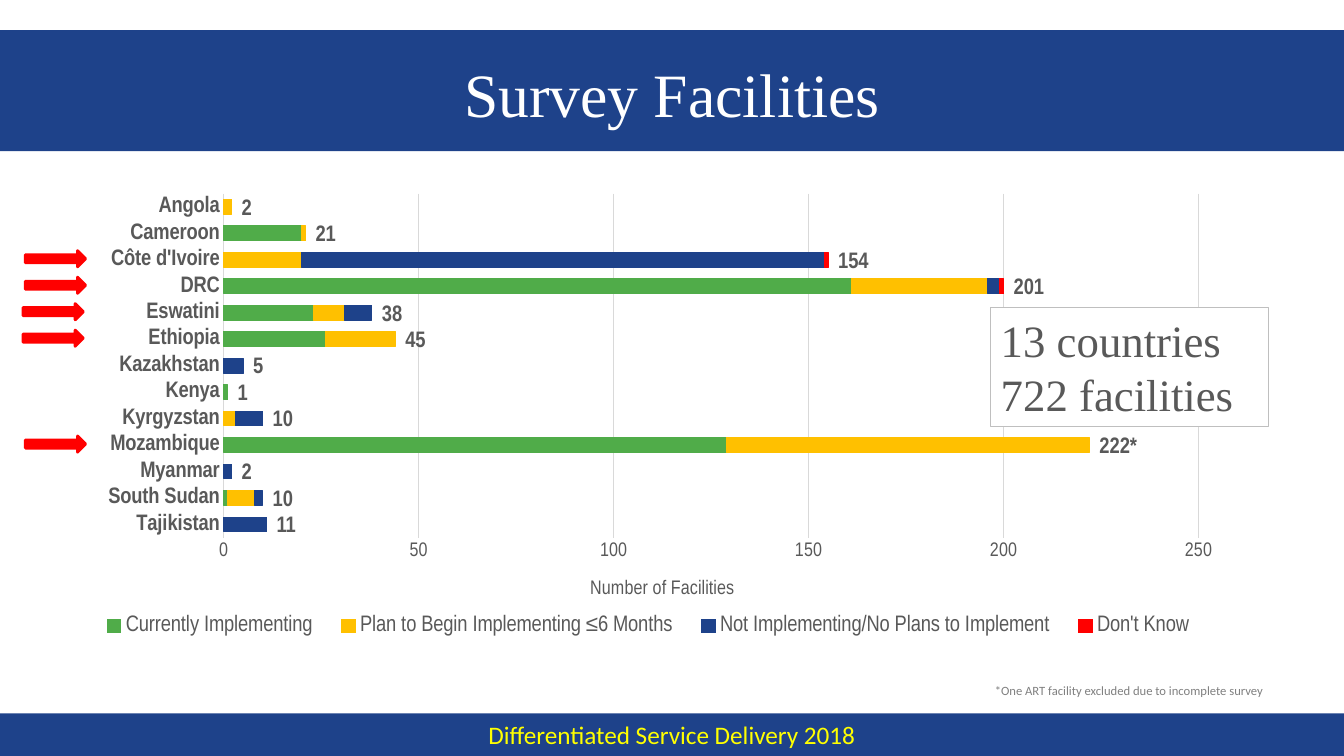
from dataclasses import dataclass
from typing import Any, Optional

from lxml import etree
from pptx import Presentation
from pptx import slide as sl
from pptx import util as u
from pptx.chart import data as cd
from pptx.dml.color import RGBColor
from pptx.enum import chart as ch
from pptx.enum import shapes, text
from pptx.oxml import ns


@dataclass(frozen=True)
class Theme:
    blue: str = "1E428A"
    green: str = "50AC49"
    amber: str = "FFC000"
    red: str = "FF0000"
    yellow: str = "FFFF00"
    white: str = "FFFFFF"
    ink: str = "595959"
    grey: str = "808080"
    border: str = "BFBFBF"
    grid: str = "D9D9D9"
    serif: str = "Times New Roman"
    narrow: str = "Arial Narrow"
    sans: str = "Calibri"
    title_size: int = 44
    callout_size: int = 32
    footer_size: int = 18
    label_size: int = 16
    axis_size: int = 14
    note_size: int = 9
    hairline: float = 0.75


@dataclass(frozen=True)
class Box:
    """A rectangle in centimetres."""
    left: float
    top: float
    width: float
    height: float

    def lengths(self) -> list[u.Length]:
        return [u.Cm(value) for value in (self.left, self.top, self.width, self.height)]


@dataclass(frozen=True)
class Country:
    name: str
    counts: tuple[Optional[int], ...]
    label: str
    arrow_left: Optional[float] = None


@dataclass(frozen=True)
class Status:
    name: str
    color: str


THEME = Theme()
STATUSES = [
    Status("Currently Implementing", THEME.green),
    Status("Plan to Begin Implementing ≤6 Months", THEME.amber),
    Status("Not Implementing/No Plans to Implement", THEME.blue),
    Status("Don't Know", THEME.red),
]
COUNTRIES = [
    Country("Angola", (None, 2, None, None), "2"),
    Country("Cameroon", (20, 1, None, None), "21"),
    Country("Côte d'Ivoire", (None, 20, 134, 1), "154", 0.64),
    Country("DRC", (161, 35, 3, 1), "201", 0.64),
    Country("Eswatini", (23, 8, 7, None), "38", 0.58),
    Country("Ethiopia", (26, 18, None, None), "45", 0.58),
    Country("Kazakhstan", (None, None, 5, None), "5"),
    Country("Kenya", (1, None, None, None), "1"),
    Country("Kyrgyzstan", (None, 3, 7, None), "10"),
    Country("Mozambique", (129, 93, None, None), "222*", 0.64),
    Country("Myanmar", (None, None, 2, None), "2"),
    Country("South Sudan", (1, 7, 2, None), "10"),
    Country("Tajikistan", (None, None, 11, None), "11"),
]
AXIS_MAX = 250
CHART = Box(0.64, 4.24, 30.48, 12.27)
PLOT = Box(5.64, 4.88, 24.57, 8.67)


def style_font(font: Any, name: str, size: int, color: str, bold: bool = False) -> None:
    font.name, font.size, font.bold = name, u.Pt(size), bold
    font.color.rgb = RGBColor.from_string(color)


def style_line(line: Any, color: str, width: float = THEME.hairline) -> None:
    line.color.rgb = RGBColor.from_string(color)
    line.width = u.Pt(width)


def write(frame: Any, lines: list[str], name: str, size: int, color: str,
          bold: bool = False, align: Any = text.PP_ALIGN.LEFT,
          anchor: Any = text.MSO_ANCHOR.TOP) -> None:
    frame.word_wrap = True
    frame.vertical_anchor = anchor
    for index, line in enumerate(lines):
        paragraph = frame.add_paragraph() if index else frame.paragraphs[0]
        paragraph.alignment = align
        run = paragraph.add_run()
        run.text = line
        style_font(run.font, name, size, color, bold)


def add_block(slide: sl.Slide, kind: Any, box: Box, fill: str,
              line: Optional[str] = None, width: float = THEME.hairline) -> Any:
    shape = slide.shapes.add_shape(kind, *box.lengths())
    shape.shadow.inherit = False
    shape.fill.solid()
    shape.fill.fore_color.rgb = RGBColor.from_string(fill)
    if line:
        style_line(shape.line, line, width)
    else:
        shape.line.fill.background()
    return shape


def set_layout(element: Any, index: int, target: Optional[str] = None, **fractions: float) -> None:
    """Place a chart part by fractions of the chart area."""
    for old in element.findall(ns.qn("c:layout")):
        element.remove(old)
    layout = etree.Element(ns.qn("c:layout"))
    manual = etree.SubElement(layout, ns.qn("c:manualLayout"))
    values = {"layoutTarget": target} if target else {}
    values |= {"xMode": "edge", "yMode": "edge"}
    values |= {key: f"{value:.4f}" for key, value in fractions.items()}
    for key, value in values.items():
        etree.SubElement(manual, ns.qn(f"c:{key}")).set("val", value)
    element.insert(index, layout)


def add_facility_chart(slide: sl.Slide) -> None:
    rows = COUNTRIES[::-1]
    data = cd.CategoryChartData()
    data.categories = [country.name for country in rows]
    for index, status in enumerate(STATUSES):
        data.add_series(status.name, [country.counts[index] for country in rows])
    chart = slide.shapes.add_chart(ch.XL_CHART_TYPE.BAR_STACKED, *CHART.lengths(), data).chart
    style_font(chart.font, THEME.narrow, THEME.axis_size, THEME.ink)
    chart.has_title = False

    plot = chart.plots[0]
    plot.gap_width, plot.overlap, plot.vary_by_categories = 79, 100, False
    for series, status in zip(plot.series, STATUSES):
        series.format.fill.solid()
        series.format.fill.fore_color.rgb = RGBColor.from_string(status.color)
        style_line(series.format.line, status.color)

    names, values = chart.category_axis, chart.value_axis
    for axis in (names, values):
        axis.major_tick_mark = axis.minor_tick_mark = ch.XL_TICK_MARK.NONE
    style_font(names.tick_labels.font, THEME.narrow, THEME.label_size, THEME.ink, True)
    style_line(names.format.line, THEME.grid)
    style_font(values.tick_labels.font, THEME.narrow, THEME.axis_size, THEME.ink)
    values.minimum_scale, values.maximum_scale, values.major_unit = 0, AXIS_MAX, 50
    values.format.line.fill.background()
    style_line(values.major_gridlines.format.line, THEME.grid)
    write(values.axis_title.text_frame, ["Number of Facilities"],
          THEME.narrow, THEME.axis_size, THEME.ink)

    chart.has_legend = True
    chart.legend.position = ch.XL_LEGEND_POSITION.BOTTOM
    chart.legend.include_in_layout = False
    style_font(chart.legend.font, THEME.narrow, THEME.label_size, THEME.ink)

    plot_area = chart._chartSpace.find(f".//{ns.qn('c:plotArea')}")
    set_layout(plot_area, 0, "inner", x=0.164, y=0.052, w=0.806, h=0.707)
    set_layout(values.axis_title._element, 1, x=0.464, y=0.833)
    set_layout(chart.legend._element, 1, x=0.05, y=0.9, w=0.93, h=0.08)


def annotate_rows(slide: sl.Slide) -> None:
    """Put a total after each bar and an arrow before the marked countries."""
    pitch = PLOT.height / len(COUNTRIES)
    for row, country in enumerate(COUNTRIES):
        middle = PLOT.top + pitch * (row + 0.5)
        bar_end = PLOT.left + PLOT.width * sum(filter(None, country.counts)) / AXIS_MAX
        total = slide.shapes.add_textbox(*Box(bar_end, middle - 0.48, 1.85, 0.94).lengths())
        write(total.text_frame, [country.label], THEME.narrow, THEME.label_size, THEME.ink, True)
        if country.arrow_left is not None:
            add_block(slide, shapes.MSO_SHAPE.RIGHT_ARROW,
                      Box(country.arrow_left, middle - 0.23, 1.52, 0.41),
                      THEME.red, THEME.red, 2)


def main() -> None:
    presentation = Presentation()
    presentation.slide_width, presentation.slide_height = u.Cm(33.87), u.Cm(19.05)
    slide = presentation.slides.add_slide(presentation.slide_layouts[5])
    rectangle, centre, middle = shapes.MSO_SHAPE.RECTANGLE, text.PP_ALIGN.CENTER, text.MSO_ANCHOR.MIDDLE

    add_block(slide, rectangle, Box(0, 0.76, 33.87, 3.05), THEME.blue)
    footer = add_block(slide, rectangle, Box(0, 17.98, 33.87, 1.07), THEME.blue)
    write(footer.text_frame, ["Differentiated Service Delivery 2018"], THEME.sans,
          THEME.footer_size, THEME.yellow, align=centre, anchor=middle)

    title = slide.shapes.title
    title.left, title.top, title.width, title.height = Box(1.7, 0.76, 30.48, 3.18).lengths()
    write(title.text_frame, ["Survey Facilities"], THEME.serif, THEME.title_size,
          THEME.white, align=centre, anchor=middle)
    slide.shapes._spTree.append(title._element)  # in front of the blue band

    add_facility_chart(slide)
    callout = add_block(slide, rectangle, Box(24.97, 7.75, 6.99, 3), THEME.white, THEME.border)
    write(callout.text_frame, ["13 countries", "722 facilities"], THEME.serif,
          THEME.callout_size, THEME.ink)
    annotate_rows(slide)
    note = slide.shapes.add_textbox(*Box(24.82, 17.09, 7.82, 0.64).lengths())
    write(note.text_frame, ["*One ART facility excluded due to incomplete survey"],
          THEME.sans, THEME.note_size, THEME.grey)
    presentation.save("out.pptx")


if __name__ == "__main__":
    main()
